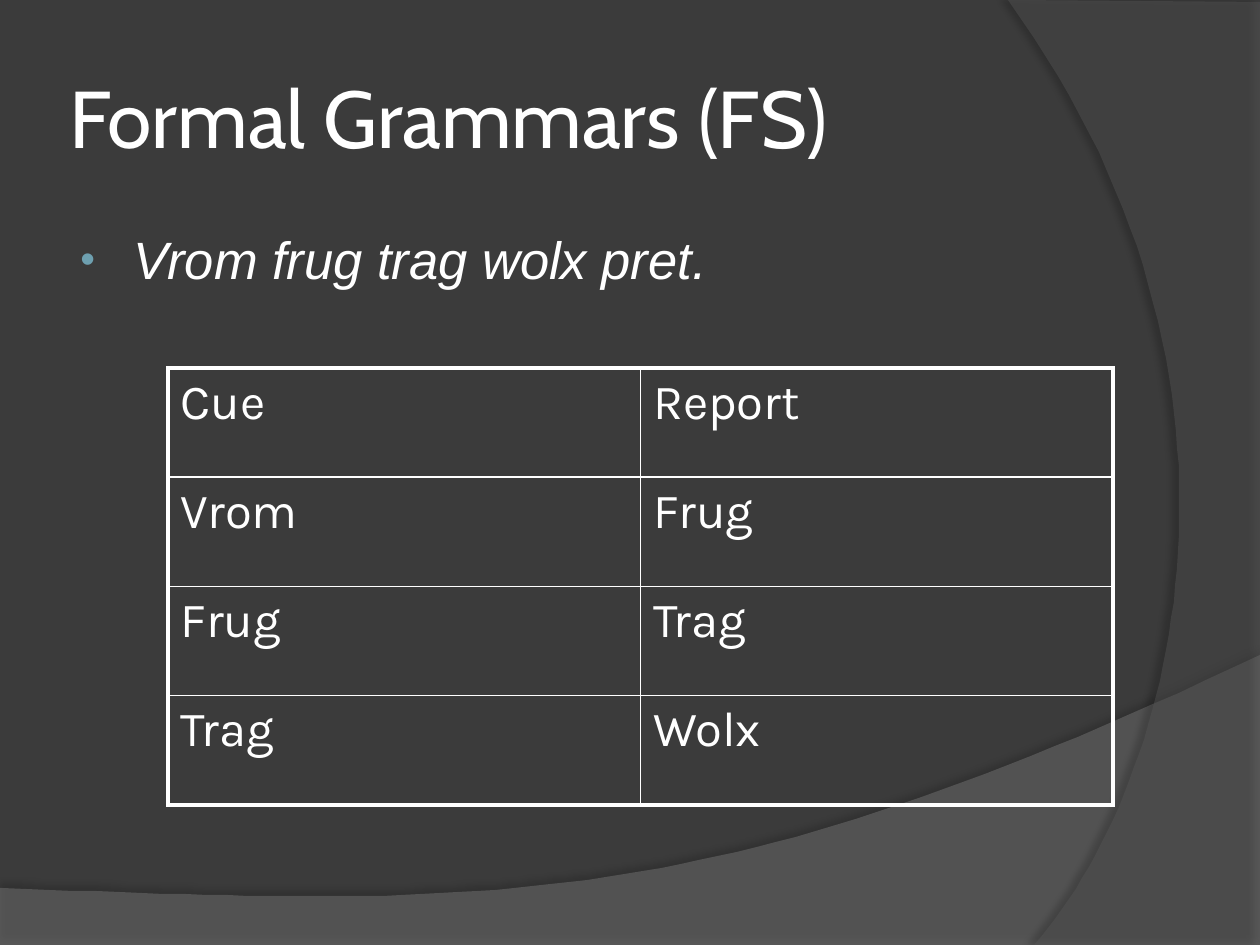
from lxml.etree import SubElement
from pptx import Presentation
from pptx.dml.color import RGBColor
from pptx.enum.text import MSO_ANCHOR, PP_ALIGN
from pptx.oxml.ns import qn
from pptx.util import Emu, Pt

EMU_PER_PX = 914400 / 126
BACKGROUND = RGBColor(0x3B, 0x3B, 0x3B)
WAVE = RGBColor(0x7C, 0x7C, 0x7C)
ARC = RGBColor(0x59, 0x59, 0x59)
WHITE = RGBColor(0xFF, 0xFF, 0xFF)
BULLET = RGBColor(0x6E, 0xA0, 0xB0)
BLACK = RGBColor(0, 0, 0)


def px(n):
    return Emu(round(n * EMU_PER_PX))


def add_run(p, text, font, size, italic=None):
    r = p.add_run()
    r.text = text
    r.font.name = font
    r.font.size = Pt(size)
    r.font.italic = italic
    r.font.color.rgb = WHITE


prs = Presentation()
prs.slide_width, prs.slide_height = px(1260), px(945)
s = prs.slides.add_slide(prs.slide_layouts[5])
s.background.fill.solid()
s.background.fill.fore_color.rgb = BACKGROUND

# Backdrop: straight corners, then one Bézier curve sampled evenly.
# corners, curve (start, control, control, end), colour, alpha %,
# shadow alpha %, shadow distance pt, shadow direction in degrees
backdrop = [
    ([(0, 888), (0, 946), (1260, 946)],
     [(1260, 655), (704, 919), (493, 906), (0, 888)], WAVE, 45, 35, 3.5, 270),
    ([(1260, 2), (1260, 945)],
     [(1034, 945), (1178, 780), (1283, 378), (1008, 0)], ARC, 40, 45, 4, 180),
]
STEPS = 60
for corners, curve, color, alpha, shade, distance, direction in backdrop:
    points = list(corners)
    for i in range(STEPS + 1):
        t = i / STEPS
        weights = [(1 - t) ** 3, 3 * t * (1 - t) ** 2, 3 * t * t * (1 - t), t ** 3]
        points.append(tuple(sum(w * c[axis] for w, c in zip(weights, curve))
                            for axis in (0, 1)))
    builder = s.shapes.build_freeform(*points[0], scale=EMU_PER_PX)
    builder.add_line_segments(points[1:], close=True)
    sp = builder.convert_to_shape()
    sp.line.fill.background()
    sp.fill.solid()
    sp.fill.fore_color.rgb = color
    sp.shadow.inherit = False
    sp_pr = sp.element.spPr
    fill_color = sp_pr.find(qn("a:solidFill"))[0]
    SubElement(fill_color, qn("a:alpha"), val=str(alpha * 1000))
    shadow = SubElement(sp_pr.find(qn("a:effectLst")), qn("a:outerShdw"),
                        blurRad=str(Pt(4)), dist=str(Pt(distance)),
                        dir=str(direction * 60000), algn="ctr", rotWithShape="0")
    shadow_color = SubElement(shadow, qn("a:srgbClr"), val=str(BLACK))
    SubElement(shadow_color, qn("a:alpha"), val=str(shade * 1000))

# Title, brought in front of the backdrop
title = s.shapes.title
title.element.getparent().append(title.element)
title.left, title.top, title.width, title.height = px(63), px(38), px(1029), px(157)
tf = title.text_frame
tf.vertical_anchor = MSO_ANCHOR.MIDDLE
tf.margin_left = tf.margin_right = tf.margin_top = tf.margin_bottom = px(6)
p = tf.paragraphs[0]
p.alignment = PP_ALIGN.LEFT
add_run(p, "Formal Grammars (FS)", "Cabin", 46)

# Bulleted example sentence
body = s.shapes.add_textbox(px(63), px(221), px(1029), px(624))
tf = body.text_frame
tf.word_wrap = True
p = tf.paragraphs[0]
p.space_before = Pt(6)
add_run(p, "Vrom frug trag wolx pret.", "Arial", 30, italic=True)
p_pr = p._p.get_or_add_pPr()
p_pr.set("marL", str(px(58)))
p_pr.set("indent", str(px(-53)))
SubElement(SubElement(p_pr, qn("a:buClr")), qn("a:srgbClr"), val=str(BULLET))
SubElement(p_pr, qn("a:buSzPct"), val="80000")
SubElement(p_pr, qn("a:buFont"), typeface="Arial")
SubElement(p_pr, qn("a:buChar"), char="•")

# Cue and report table: thick frame, thin inner rules
rows = [("Cue", "Report"), ("Vrom", "Frug"), ("Frug", "Trag"), ("Trag", "Wolx")]
n_rows, n_cols = len(rows), len(rows[0])
table = s.shapes.add_table(n_rows, n_cols, px(168), px(368), px(945), px(437)).table
table.first_row = table.horz_banding = False
for i, row in enumerate(rows):
    for j, text in enumerate(row):
        cell = table.cell(i, j)
        p = cell.text_frame.paragraphs[0]
        p.space_before = Pt(5.6)
        add_run(p, text, "Karla", 28)
        tc_pr = cell._tc.get_or_add_tcPr()
        on_frame = {"L": j == 0, "R": j == n_cols - 1,
                    "T": i == 0, "B": i == n_rows - 1}
        for side, outer in on_frame.items():
            ln = SubElement(tc_pr, qn(f"a:ln{side}"), w=str(Pt(2.25 if outer else 1)))
            SubElement(SubElement(ln, qn("a:solidFill")), qn("a:srgbClr"), val=str(WHITE))
        cell.fill.background()

prs.save("out.pptx")
